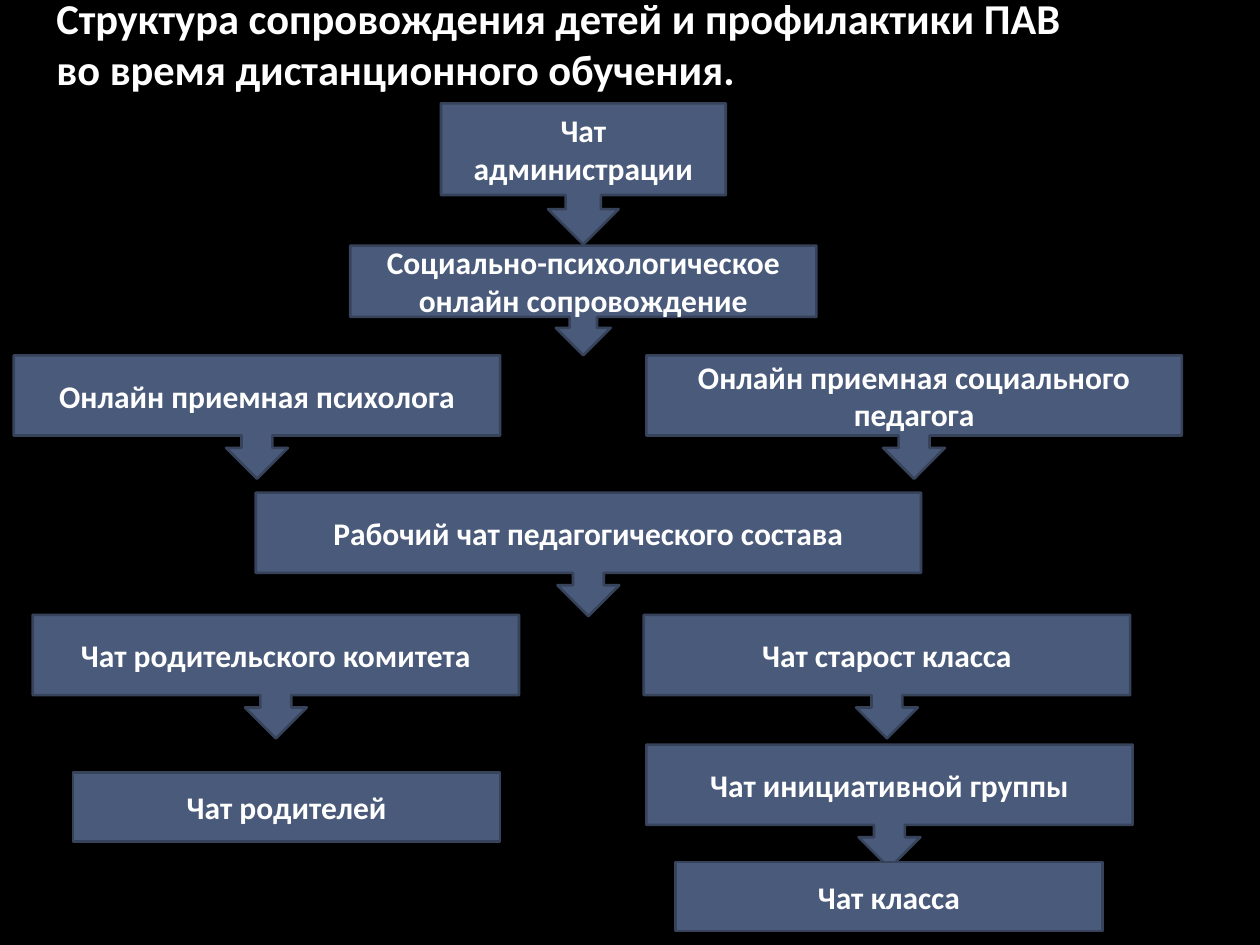
import pptx
import pptx.dml.color
import pptx.enum.shapes
import pptx.enum.text
import pptx.util

Inches = pptx.util.Inches
Pt = pptx.util.Pt
RGBColor = pptx.dml.color.RGBColor
Kind = pptx.enum.shapes.MSO_SHAPE
Align = pptx.enum.text.PP_ALIGN
Anchor = pptx.enum.text.MSO_ANCHOR

BLACK = RGBColor(0x00, 0x00, 0x00)
WHITE = RGBColor(0xFF, 0xFF, 0xFF)
STEEL = RGBColor(0x4A, 0x5A, 0x7A)
EDGE = RGBColor(0x37, 0x43, 0x5A)

HEAD = "Структура сопровождения детей и профилактики ПАВ во время дистанционного обучения."
HEAD_FONT = {"name": "Calibri", "size": Pt(24.3), "bold": True}
NODE_FONT = {"name": "Calibri", "size": Pt(18), "bold": True}
HEAD_FRAME = {"word_wrap": True, "vertical_anchor": Anchor.BOTTOM, "margin_bottom": Inches(0.64)}
NODE_FRAME = {"word_wrap": True, "vertical_anchor": Anchor.MIDDLE}

CALL = Kind.DOWN_ARROW_CALLOUT
RECT = Kind.RECTANGLE
WIDE, TALL = 3.86, 0.98
LEAF = (3.39, 0.55)
NODES = [
    ("Чат администрации", CALL, 3.39, 0, 2.26, 1.12),
    ("Социально-психологическое онлайн сопровождение", CALL, 2.67, 1.13, 3.7, 0.87),
    ("Онлайн приемная психолога", CALL, 0, 2, WIDE, TALL),
    ("Онлайн приемная социального педагога", CALL, 5.02, 2, 4.25, TALL),
    ("Рабочий чат педагогического состава", CALL, 1.92, 3.09, 5.28, TALL),
    ("Чат родительского комитета", CALL, 0.15, 4.06, WIDE, TALL),
    ("Чат старост класса", CALL, 5, 4.06, WIDE, TALL),
    ("Чат родителей", RECT, 0.47, 5.31, *LEAF),
    ("Чат инициативной группы", CALL, 5.02, 5.09, WIDE, TALL),
    ("Чат класса", RECT, 5.25, 6.02, *LEAF),
]


def apply(item, form):
    """Set each attribute of item from a dict of format values."""
    for key, value in form.items():
        setattr(item, key, value)


def write(shape, text, frame, font, align):
    """Put one formatted paragraph of white text into a shape."""
    apply(shape.text_frame, frame)
    para = shape.text_frame.paragraphs[0]
    para.alignment = align
    run = para.add_run()
    run.text = text
    apply(run.font, font)
    run.font.color.rgb = WHITE


def add_head(slide, left, top, width, height):
    """Place the slide heading in the given box."""
    box = slide.shapes.add_textbox(left, top, width, height)
    write(box, HEAD, HEAD_FRAME, HEAD_FONT, Align.LEFT)


def add_tree(slide, left, top):
    """Place the chat scheme with its corner at the given point."""
    for text, kind, x, y, width, height in NODES:
        node = slide.shapes.add_shape(
            kind, left + Inches(x), top + Inches(y), Inches(width), Inches(height))
        node.shadow.inherit = False
        node.fill.solid()
        node.fill.fore_color.rgb = STEEL
        node.line.color.rgb = EDGE
        node.line.width = Pt(1.5)
        write(node, text, NODE_FRAME, NODE_FONT, Align.CENTER)


def main():
    """Build and save the slide."""
    deck = pptx.Presentation()
    apply(deck, {"slide_width": Inches(10), "slide_height": Inches(7.5)})
    slide = deck.slides.add_slide(deck.slide_layouts[6])
    slide.background.fill.solid()
    slide.background.fill.fore_color.rgb = BLACK
    add_head(slide, Inches(0.35), Inches(0.52), Inches(8.4), Inches(0.87))
    add_tree(slide, Inches(0.11), Inches(0.82))
    deck.save("out.pptx")


if __name__ == "__main__":
    main()
